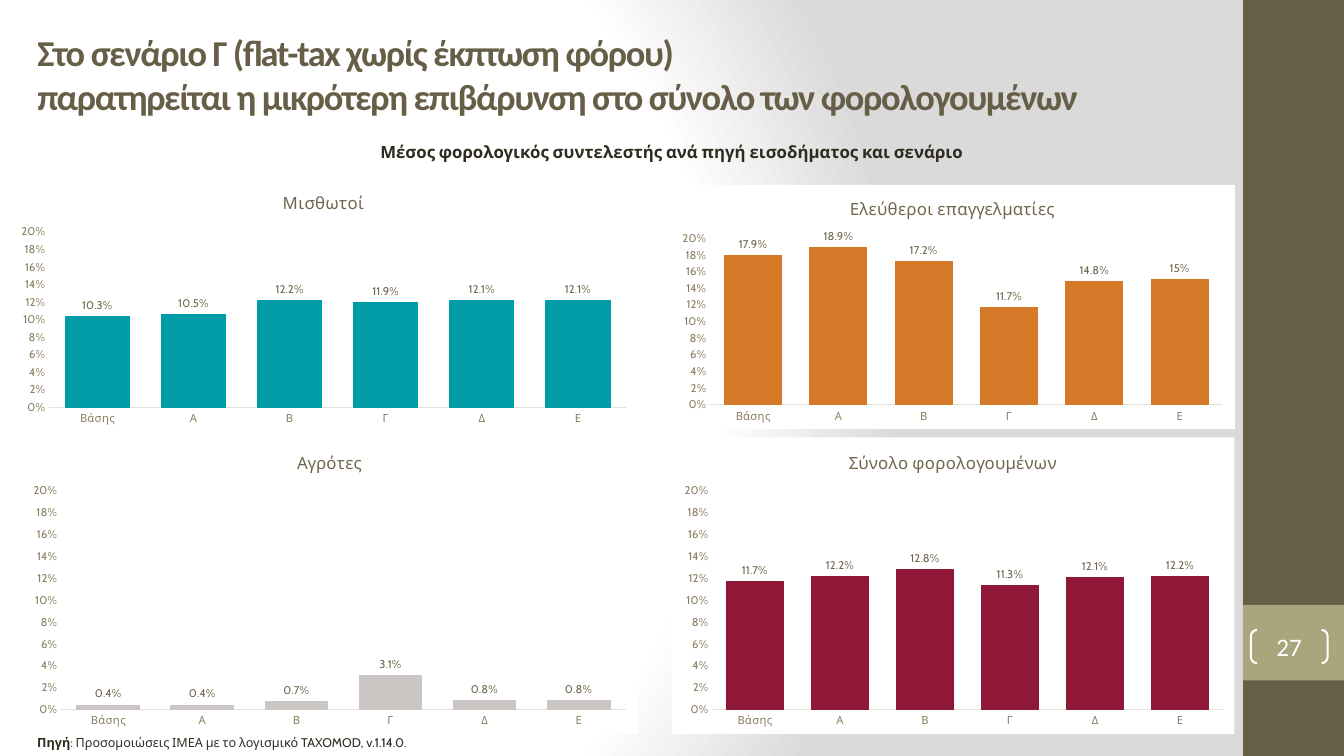
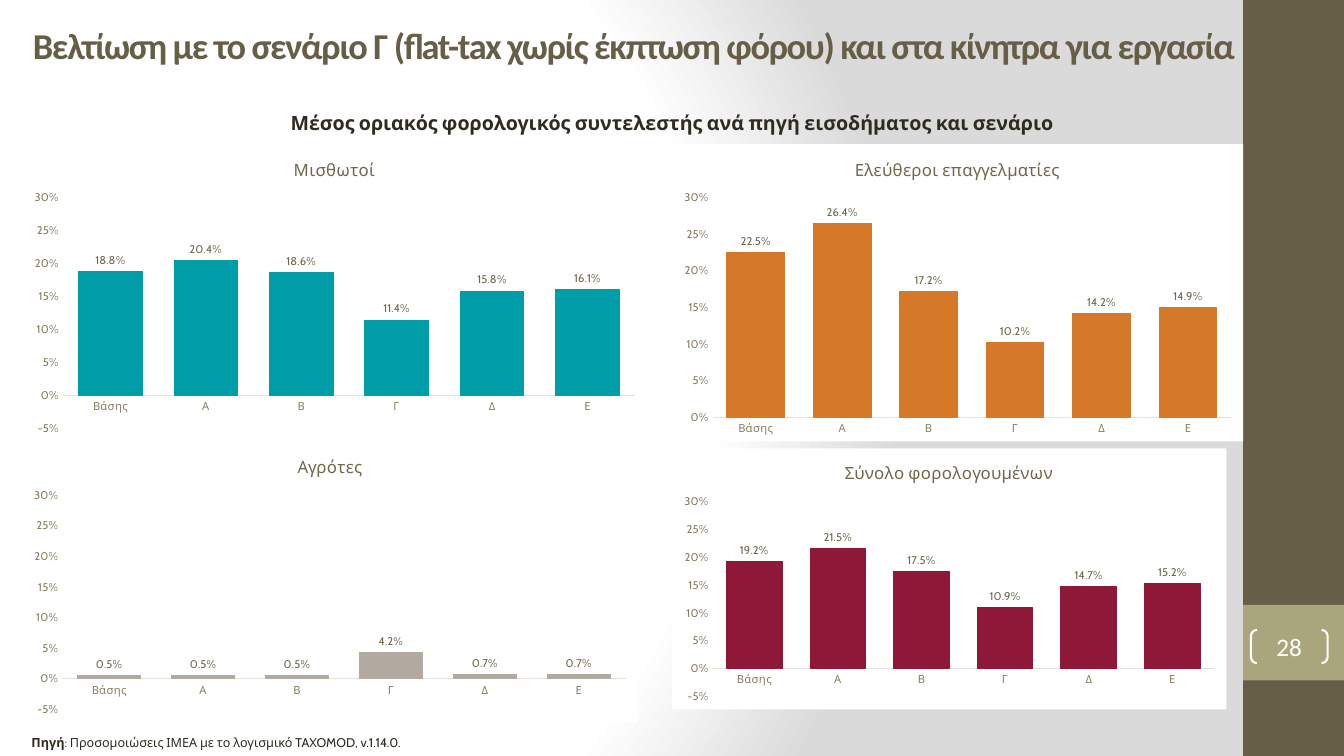
from dataclasses import dataclass

from pptx import Presentation
from pptx.chart.data import CategoryChartData
from pptx.dml.color import RGBColor as RGB
from pptx.enum.chart import XL_CHART_TYPE as ChartType, XL_LABEL_POSITION as LabelPos, XL_TICK_MARK as Tick
from pptx.enum.shapes import MSO_SHAPE as Shape
from pptx.enum.text import MSO_ANCHOR as Anchor, MSO_AUTO_SIZE as AutoSize, PP_ALIGN as Align
from pptx.oxml import parse_xml
from pptx.oxml.ns import nsdecls, qn
from pptx.util import Inches, Pt


@dataclass(frozen=True)
class Theme:
    """Colours, fonts and type sizes shared by the slides."""
    brown: str = "675E47"
    olive: str = "A9A57C"
    white: str = "FFFFFF"
    grey: str = "DADADA"
    ink: str = "2F2B20"
    label: str = "6F664C"
    axis: str = "897D5D"
    axis_line: str = "E5E2D9"
    teal: str = "009CA7"
    orange: str = "D57827"
    silver: str = "CBC6C3"
    taupe: str = "B2AAA0"
    wine: str = "8F1838"
    head_font: str = "Calibri"
    body_font: str = "Cabin"
    title: int = 26
    number: int = 18
    chart_title: int = 12
    source: int = 9
    small: int = 8


T = Theme()
WIDTH, HEIGHT = Inches(13.33), Inches(7.5)
CATEGORIES = ["Βάσης", "Α", "Β", "Γ", "Δ", "Ε"]
PLOT_LEFT, PLOT_RIGHT, PLOT_TOP = Inches(0.4), Inches(0.12), Inches(0.53)
PLOT_BOTTOM, PLOT_BOTTOM_NEGATIVE = Inches(0.24), Inches(0.13)

SLIDES = [
    dict(
        number=27,
        title="Στο σενάριο Γ (flat-tax χωρίς έκπτωση φόρου)\n"
              "παρατηρείται η μικρότερη επιβάρυνση στο σύνολο των φορολογουμένων",
        title_area=(2.03, 3.33, 88, 13.07),
        subtitle="Μέσος φορολογικός συντελεστής ανά πηγή εισοδήματος και σενάριο",
        subtitle_area=(20.75, 18.1, 58.5, 4), subtitle_size=12,
        source_left=2.03, top=0.2, step=0.02,
        charts=[
            ("Μισθωτοί", (0.68, 23.6, 46.8, 33.47), T.teal, 0,
             (10.3, 10.5, 12.2, 11.9, 12.1, 12.1)),
            ("Ελεύθεροι επαγγελματίες", (49.88, 24.45, 42, 32.27), T.orange, 0,
             (17.9, 18.9, 17.2, 11.7, 14.8, 15)),
            ("Αγρότες", (1.58, 57.87, 45.9, 39.2), T.silver, 0,
             (0.4, 0.4, 0.7, 3.1, 0.8, 0.8)),
            ("Σύνολο φορολογουμένων", (50, 57.87, 41.85, 39.2), T.wine, 0,
             (11.7, 12.2, 12.8, 11.3, 12.1, 12.2)),
        ],
    ),
    dict(
        number=28,
        title="Βελτίωση με το σενάριο Γ (flat-tax χωρίς έκπτωση φόρου) και στα κίνητρα για εργασία",
        title_area=(1.7, 2.4, 92.6, 7.2),
        subtitle="Μέσος οριακός φορολογικός συντελεστής ανά πηγή εισοδήματος και σενάριο",
        subtitle_area=(20.75, 14, 58.5, 4.5), subtitle_size=14,
        source_left=1.6, top=0.3, step=0.05,
        charts=[
            ("Μισθωτοί", (1.65, 19.05, 46.5, 39.33), T.teal, -0.05,
             (18.8, 20.4, 18.6, 11.4, 15.8, 16.1)),
            ("Αγρότες", (1.65, 58.4, 45.83, 37.2), T.taupe, -0.05,
             (0.5, 0.5, 0.5, 4.2, 0.7, 0.7)),
            ("Ελεύθεροι επαγγελματίες", (50, 19.05, 42.5, 39.33), T.orange, 0,
             (22.5, 26.4, 17.2, 10.2, 14.2, 14.9)),
            ("Σύνολο φορολογουμένων", (50, 59.3, 41.25, 34.53), T.wine, -0.05,
             (19.2, 21.5, 17.5, 10.9, 14.7, 15.2)),
        ],
    ),
]


def area(left, top, width, height):
    """Turn percentages of the slide into left, top, width and height."""
    return (int(WIDTH * left / 100), int(HEIGHT * top / 100),
            int(WIDTH * width / 100), int(HEIGHT * height / 100))


def style_font(font, size, color, name=T.body_font, bold=False):
    """Set the size, colour, face and weight of a font."""
    font.size, font.name, font.bold = Pt(size), name, bold
    font.color.rgb = RGB.from_string(color)


def paint(fmt, color):
    """Give a format a solid fill and a thin line of one colour."""
    fmt.fill.solid()
    fmt.fill.fore_color.rgb = RGB.from_string(color)
    fmt.line.color.rgb = RGB.from_string(color)
    fmt.line.width = Pt(0.75)


def set_background(layout):
    """Give the layout its radial gradient."""
    layout.background.fill.gradient()
    old = layout.element.find(".//" + qn("a:gradFill"))
    stops = "".join(f'<a:gs pos="{pos}000"><a:srgbClr val="{color}"/></a:gs>'
                    for pos, color in ((0, T.white), (75, T.white), (100, T.grey)))
    old.getparent().replace(old, parse_xml(
        f'<a:gradFill {nsdecls("a")} rotWithShape="1"><a:gsLst>{stops}</a:gsLst>'
        '<a:path path="circle"><a:fillToRect l="20000" t="50000" r="100000" b="50000"/>'
        '</a:path></a:gradFill>'))


def add_bands(slide, layout):
    """Draw the side bands and hand them to the layout."""
    for color, top, height in ((T.brown, 0, 100), (T.olive, 80, 10)):
        sp = slide.shapes.add_shape(Shape.RECTANGLE, *area(92.5, top, 7.5, height))
        sp.shadow.inherit = False
        sp.fill.solid()
        sp.fill.fore_color.rgb = RGB.from_string(color)
        sp.line.fill.background()
        layout.shapes.element.append(sp.element)


def add_title(slide, text, place):
    """Fill and format the title placeholder."""
    sp = slide.shapes.title
    sp.left, sp.top, sp.width, sp.height = area(*place)
    tf = sp.text_frame
    tf.text = text
    tf.vertical_anchor, tf.auto_size = Anchor.TOP, AutoSize.NONE
    for p in tf.paragraphs:
        p.alignment = Align.LEFT
        for r in p.runs:
            style_font(r.font, T.title, T.brown, T.head_font, True)
            r.font._element.set("spc", "-100")


def add_text(slide, place, runs, size, align):
    """Add a one-paragraph text box from (text, bold) runs."""
    tf = slide.shapes.add_textbox(*area(*place)).text_frame
    tf.word_wrap = True
    p = tf.paragraphs[0]
    p.alignment = align
    for text, bold in runs:
        r = p.add_run()
        r.text = text
        style_font(r.font, size, T.ink, bold=bold)
    return p


def add_source(slide, left):
    """Add the source line at the foot of the slide."""
    runs = [("Πηγή", True), (": Προσομοιώσεις ΙΜΕΑ με το λογισμικό TAXOMOD, v.1.14.0.", False)]
    p = add_text(slide, (left, 96.27, 37.5, 3.6), runs, T.source, Align.JUSTIFY)
    p.line_spacing, p.space_after = 1.15, Pt(6)


def add_number(slide, number):
    """Add the bracketed slide number."""
    sp = slide.shapes.add_shape(Shape.DOUBLE_BRACKET, *area(93.08, 83.33, 5.7, 4.4))
    sp.adjustments[0] = 0.18
    sp.shadow.inherit = False
    sp.fill.background()
    sp.line.color.rgb = RGB.from_string(T.white)
    sp.line.width = Pt(1.5)
    tf = sp.text_frame
    tf.margin_left = tf.margin_right = tf.margin_top = tf.margin_bottom = 0
    tf.vertical_anchor = Anchor.MIDDLE
    p = tf.paragraphs[0]
    p.text = str(number)
    p.alignment = Align.CENTER
    style_font(p.runs[0].font, T.number, T.white, T.head_font)


def frame_plot(chart, width, height, bottom):
    """Set a white chart ground and fixed margins round the plot."""
    shares = dict(x=PLOT_LEFT / width, y=PLOT_TOP / height,
                  w=1 - (PLOT_LEFT + PLOT_RIGHT) / width,
                  h=1 - (PLOT_TOP + bottom) / height)
    modes = '<c:layoutTarget val="inner"/><c:xMode val="edge"/><c:yMode val="edge"/>'
    values = "".join(f'<c:{key} val="{share:.3f}"/>' for key, share in shares.items())
    root = chart.element.find(qn("c:chart"))
    plot_area = root.find(qn("c:plotArea"))
    for old in plot_area.findall(qn("c:layout")):
        plot_area.remove(old)
    plot_area.insert(0, parse_xml(
        f'<c:layout {nsdecls("c")}><c:manualLayout>{modes}{values}</c:manualLayout></c:layout>'))
    root.addnext(parse_xml(
        f'<c:spPr {nsdecls("c", "a")}><a:solidFill><a:srgbClr val="{T.white}"/></a:solidFill>'
        '<a:ln><a:noFill/></a:ln></c:spPr>'))


def style_axes(chart, low, top, step):
    """Scale the value axis and format both axes."""
    cat, val = chart.category_axis, chart.value_axis
    for axis in (cat, val):
        axis.major_tick_mark = axis.minor_tick_mark = Tick.NONE
        axis.has_major_gridlines = False
        style_font(axis.tick_labels.font, T.small, T.axis)
    cat.format.line.color.rgb = RGB.from_string(T.axis_line)
    cat.format.line.width = Pt(0.75)
    val.format.line.fill.background()
    val.minimum_scale, val.maximum_scale, val.major_unit = low, top, step
    val.tick_labels.number_format = "0%"
    val.tick_labels.number_format_is_linked = False


def label_columns(series, percents):
    """Label the columns, leaving the decimal off whole percentages."""
    labels = series.data_labels
    labels.show_value, labels.position = True, LabelPos.OUTSIDE_END
    labels.number_format, labels.number_format_is_linked = "0.0%", False
    style_font(labels.font, T.small, T.label)
    for i, percent in enumerate(percents):
        if percent == int(percent):
            label = series.points[i].data_label
            label.position = LabelPos.OUTSIDE_END
            style_font(label.font, T.small, T.label)
            idx = labels._element.findall(qn("c:dLbl"))[-1].find(qn("c:idx"))
            idx.addnext(parse_xml(
                f'<c:numFmt {nsdecls("c")} formatCode="0%" sourceLinked="0"/>'))


def add_rate_chart(slide, title, place, color, low, percents, top, step):
    """Add a column chart of tax rates by scenario."""
    data = CategoryChartData(number_format="0.0%")
    data.categories = CATEGORIES
    data.add_series("Series 1", [round(percent / 100, 3) for percent in percents])
    x, y, width, height = area(*place)
    chart = slide.shapes.add_chart(ChartType.COLUMN_CLUSTERED, x, y, width, height, data).chart
    style_font(chart.font, T.small, T.ink)
    chart.has_legend = False
    chart.has_title = True
    tf = chart.chart_title.text_frame
    tf.text = title
    style_font(tf.paragraphs[0].runs[0].font, T.chart_title, T.label)
    chart.chart_title.include_in_layout = False
    style_axes(chart, low, top, step)
    plot = chart.plots[0]
    plot.gap_width, plot.overlap, plot.vary_by_categories = 50, -27, False
    series = plot.series[0]
    paint(series.format, color)
    label_columns(series, percents)
    frame_plot(chart, width, height, PLOT_BOTTOM_NEGATIVE if low < 0 else PLOT_BOTTOM)


def main():
    """Build and save the presentation."""
    prs = Presentation()
    prs.slide_width, prs.slide_height = WIDTH, HEIGHT
    layout = prs.slide_layouts[5]
    set_background(layout)
    for page in SLIDES:
        slide = prs.slides.add_slide(layout)
        add_title(slide, page["title"], page["title_area"])
        add_text(slide, page["subtitle_area"], [(page["subtitle"], True)],
                 page["subtitle_size"], Align.CENTER)
        for chart in page["charts"]:
            add_rate_chart(slide, *chart, page["top"], page["step"])
        add_source(slide, page["source_left"])
        add_number(slide, page["number"])
    add_bands(prs.slides[0], layout)
    prs.save("out.pptx")


if __name__ == "__main__":
    main()
